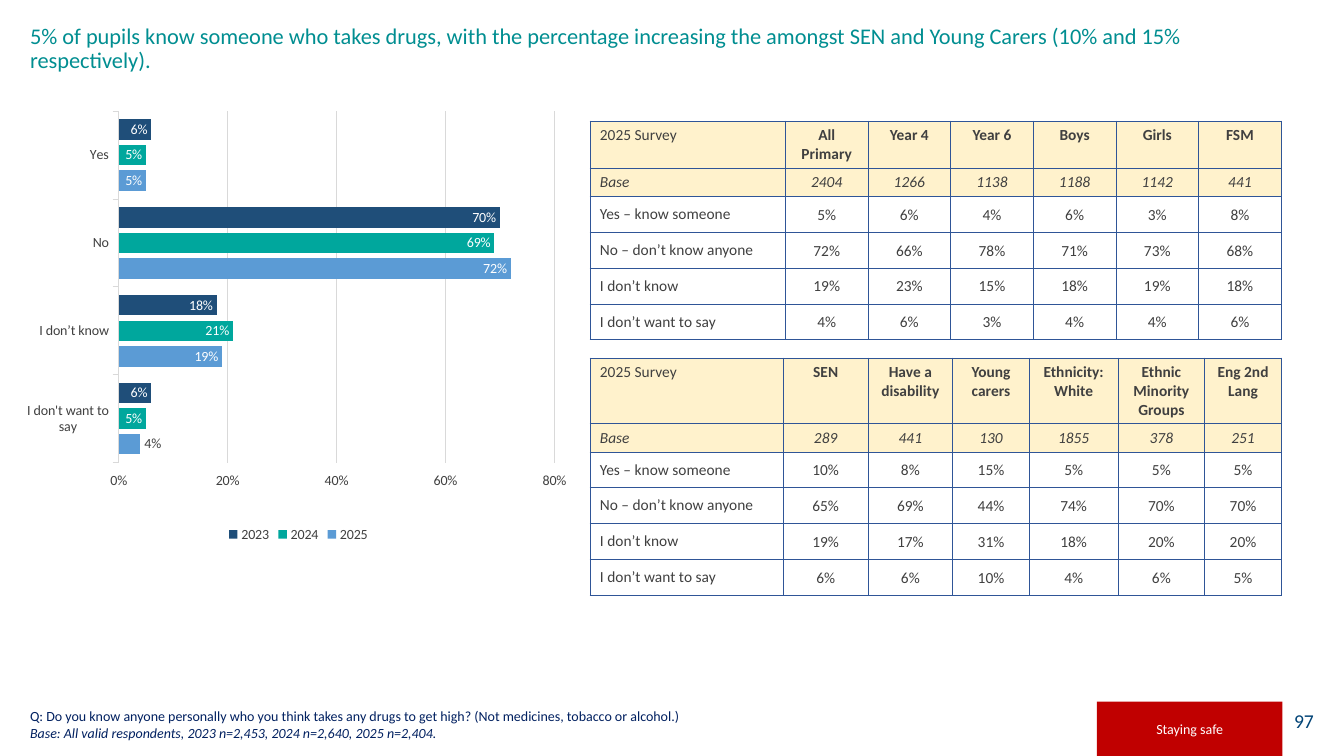
from lxml import etree
from pptx import Presentation
from pptx.chart.data import CategoryChartData
from pptx.dml.color import RGBColor
from pptx.enum.chart import (XL_CHART_TYPE, XL_LABEL_POSITION,
                             XL_LEGEND_POSITION, XL_TICK_MARK)
from pptx.enum.shapes import MSO_SHAPE
from pptx.enum.text import MSO_ANCHOR, PP_ALIGN
from pptx.oxml import parse_xml
from pptx.oxml.ns import nsdecls, qn
from pptx.util import Inches, Pt

FONT = "Calibri"
WHITE = RGBColor(0xFF, 0xFF, 0xFF)
BLACK = RGBColor(0x00, 0x00, 0x00)
TEAL = RGBColor(0x00, 0x8E, 0x91)
GREY = RGBColor(0x40, 0x40, 0x40)
PALE_GREY = RGBColor(0xD9, 0xD9, 0xD9)
NAVY = RGBColor(0x00, 0x20, 0x60)
PAGE_BLUE = RGBColor(0x00, 0x43, 0x76)
RED = RGBColor(0xC0, 0x00, 0x00)
CREAM = RGBColor(0xFF, 0xF2, 0xCC)
BORDER = RGBColor(0x2F, 0x55, 0x97)
BLUE_2025 = RGBColor(0x5B, 0x9B, 0xD5)
GREEN_2024 = RGBColor(0x00, 0xA7, 0x9D)
BLUE_2023 = RGBColor(0x1F, 0x4E, 0x79)

LEFT = 0.2
TABLE_LEFT = 5.85
ANSWERS = ["Yes – know someone", "No – don’t know anyone", "I don’t know",
           "I don’t want to say"]
TREND_ANSWERS = ["I don't want to say", "I don’t know", "No", "Yes"]
TREND = [("2025", (0.04, 0.19, 0.72, 0.05), BLUE_2025),
         ("2024", (0.05, 0.21, 0.69, 0.05), GREEN_2024),
         ("2023", (0.06, 0.18, 0.70, 0.06), BLUE_2023)]
PUPIL_GROUPS = [("All Primary", 2404, (5, 72, 19, 4)),
                ("Year 4", 1266, (6, 66, 23, 6)),
                ("Year 6", 1138, (4, 78, 15, 3)),
                ("Boys", 1188, (6, 71, 18, 4)),
                ("Girls", 1142, (3, 73, 19, 4)),
                ("FSM", 441, (8, 68, 18, 6))]
NEED_GROUPS = [("SEN", 289, (10, 65, 19, 6)),
               ("Have a disability", 441, (8, 69, 17, 6)),
               ("Young carers", 130, (15, 44, 31, 10)),
               ("Ethnicity: White", 1855, (5, 74, 18, 4)),
               ("Ethnic Minority Groups", 378, (5, 70, 20, 6)),
               ("Eng 2nd Lang", 251, (5, 70, 20, 5))]


def style_font(font, size, color, bold=False, italic=False):
    """Set the typeface, size, colour and emphasis of a font."""
    font.name, font.size, font.bold, font.italic = FONT, Pt(size), bold, italic
    font.color.rgb = color


def add_text(slide, box, lines, size, color, anchor=MSO_ANCHOR.TOP, spacing=None):
    """Add a wrapped text box from (text, italic) lines."""
    frame = slide.shapes.add_textbox(*map(Inches, box)).text_frame
    frame.word_wrap = True
    frame.vertical_anchor = anchor
    frame.text = "\n".join(text for text, _ in lines)
    for paragraph, (_, italic) in zip(frame.paragraphs, lines):
        style_font(paragraph.font, size, color, italic=italic)
        paragraph.line_spacing = spacing


def add_block(slide, box, text, size, fill, color, align):
    """Add a filled rectangle with one line of text."""
    block = slide.shapes.add_shape(MSO_SHAPE.RECTANGLE, *map(Inches, box))
    block.shadow.inherit = False
    block.fill.solid()
    block.fill.fore_color.rgb = fill
    block.line.fill.background()
    block.text_frame.vertical_anchor = MSO_ANCHOR.MIDDLE
    label = block.text_frame.paragraphs[0]
    label.text, label.alignment = text, align
    style_font(label.font, size, color)


def border_cell(cell):
    """Draw a thin line on all four sides of a table cell."""
    properties = cell._tc.get_or_add_tcPr()
    for index, side in enumerate(("lnL", "lnR", "lnT", "lnB")):
        properties.insert(index, parse_xml(
            f'<a:{side} {nsdecls("a")} w="{Pt(0.5)}"><a:solidFill>'
            f'<a:srgbClr val="{BORDER}"/></a:solidFill></a:{side}>'))


def fill_cell(cell, text, row, column):
    """Write and style one cell by its place in the table."""
    cell.text = text
    label = cell.text_frame.paragraphs[0]
    label.alignment = PP_ALIGN.CENTER if column else PP_ALIGN.LEFT
    style_font(label.font, 11, GREY, bold=row == 0 and column > 0, italic=row == 1)
    cell.vertical_anchor = MSO_ANCHOR.MIDDLE if row else MSO_ANCHOR.TOP
    if row < 2:
        cell.fill.solid()
        cell.fill.fore_color.rgb = CREAM
    else:
        cell.fill.background()
        if column:
            cell.margin_left = cell.margin_right = cell.margin_top = Inches(0.01)
            cell.margin_bottom = 0
    border_cell(cell)


def add_survey_table(slide, top, groups, widths, header_height):
    """Add a table of answer shares for each group of pupils."""
    heights = [header_height, 0.28] + [0.355] * len(ANSWERS)
    rows = [["2025 Survey"] + [name for name, _, _ in groups],
            ["Base"] + [str(base) for _, base, _ in groups]]
    rows += [[answer] + [f"{shares[i]}%" for _, _, shares in groups]
             for i, answer in enumerate(ANSWERS)]
    table = slide.shapes.add_table(
        len(rows), len(widths), Inches(TABLE_LEFT), Inches(top),
        Inches(sum(widths)), Inches(sum(heights))).table
    table.first_row = table.horz_banding = False
    for column, width in zip(table.columns, widths):
        column.width = Inches(width)
    for r, (texts, height) in enumerate(zip(rows, heights)):
        table.rows[r].height = Inches(height)
        for c, text in enumerate(texts):
            fill_cell(table.cell(r, c), text, r, c)


def place_plot(chart, x, y, width, height):
    """Fix the inner plot area as shares of the chart's size."""
    plot_area = chart._chartSpace.chart.plotArea
    for layout in plot_area.findall(qn("c:layout")):
        plot_area.remove(layout)
    layout = etree.Element(qn("c:layout"))
    manual = etree.SubElement(layout, qn("c:manualLayout"))
    settings = [("layoutTarget", "inner"), ("xMode", "edge"), ("yMode", "edge"),
                ("x", x), ("y", y), ("w", width), ("h", height)]
    for tag, value in settings:
        etree.SubElement(manual, qn(f"c:{tag}")).set("val", str(value))
    plot_area.insert(0, layout)


def style_axes(chart):
    """Style the answer axis and the percentage axis."""
    answers, shares = chart.category_axis, chart.value_axis
    for axis in (answers, shares):
        style_font(axis.tick_labels.font, 10, GREY)
        axis.major_tick_mark = XL_TICK_MARK.OUTSIDE
    shares.minimum_scale, shares.maximum_scale, shares.major_unit = 0, 0.8, 0.2
    shares.tick_labels.number_format = "0%"
    shares.tick_labels.number_format_is_linked = False
    shares.format.line.fill.background()
    answers.has_major_gridlines = False
    for line in (answers.format.line, shares.major_gridlines.format.line):
        line.color.rgb = PALE_GREY
        line.width = Pt(0.75)


def add_trend_chart(slide):
    """Add the bar chart of answers by survey year."""
    data = CategoryChartData(number_format="0%")
    data.categories = TREND_ANSWERS
    for year, shares, _ in TREND:
        data.add_series(year, shares)
    chart = slide.shapes.add_chart(
        XL_CHART_TYPE.BAR_CLUSTERED,
        *map(Inches, (LEFT, 0.91, 5.52, 4.51)), data).chart
    style_font(chart.font, 10, BLACK)
    chart.has_title = False
    chart.has_legend = True
    chart.legend.position = XL_LEGEND_POSITION.BOTTOM
    chart.legend.include_in_layout = False
    style_font(chart.legend.font, 10, GREY)
    style_axes(chart)
    bars = chart.plots[0]
    bars.gap_width, bars.overlap, bars.vary_by_categories = 80, -25, False
    for series, (_, _, color) in zip(bars.series, TREND):
        series.format.fill.solid()
        series.format.fill.fore_color.rgb = color
        labels = series.data_labels
        labels.show_value = True
        labels.number_format, labels.number_format_is_linked = "0%", False
        labels.position = XL_LABEL_POSITION.INSIDE_END
        style_font(labels.font, 10, WHITE)
    short_bar = bars.series[0].points[0].data_label
    style_font(short_bar.font, 10, GREY)
    short_bar.position = XL_LABEL_POSITION.OUTSIDE_END
    place_plot(chart, 0.177, 0.043, 0.783, 0.773)


def main():
    """Build the slide and save it."""
    deck = Presentation()
    deck.slide_width, deck.slide_height = Inches(13.33), Inches(7.5)
    slide = deck.slides.add_slide(deck.slide_layouts[6])
    add_block(slide, (12.54, 6.95, 0.59, 0.4), "97", 14, WHITE, PAGE_BLUE,
              PP_ALIGN.RIGHT)
    headline = ("5% of pupils know someone who takes drugs, with the percentage "
                "increasing the amongst SEN and Young Carers (10% and 15% "
                "respectively).")
    add_text(slide, (LEFT, 0.2, 12.69, 0.98), [(headline, False)], 16, TEAL,
             spacing=0.9)
    add_trend_chart(slide)
    question = ("Q: Do you know anyone personally who you think takes any drugs to "
                "get high? (Not medicines, tobacco or alcohol.)")
    base = "Base: All valid respondents, 2023 n=2,453, 2024 n=2,640, 2025 n=2,404."
    add_text(slide, (LEFT, 6.96, 11.19, 0.44), [(question, False), (base, True)],
             10, NAVY, MSO_ANCHOR.BOTTOM)
    add_block(slide, (10.88, 6.96, 1.84, 0.54), "Staying safe", 10, RED, WHITE,
              PP_ALIGN.CENTER)
    add_survey_table(slide, 3.55, NEED_GROUPS,
                     [1.92, 0.84, 0.84, 0.76, 0.88, 0.86, 0.76], 0.65)
    add_survey_table(slide, 1.2, PUPIL_GROUPS, [1.94] + [0.82] * 6, 0.46)
    deck.save("out.pptx")


if __name__ == "__main__":
    main()
